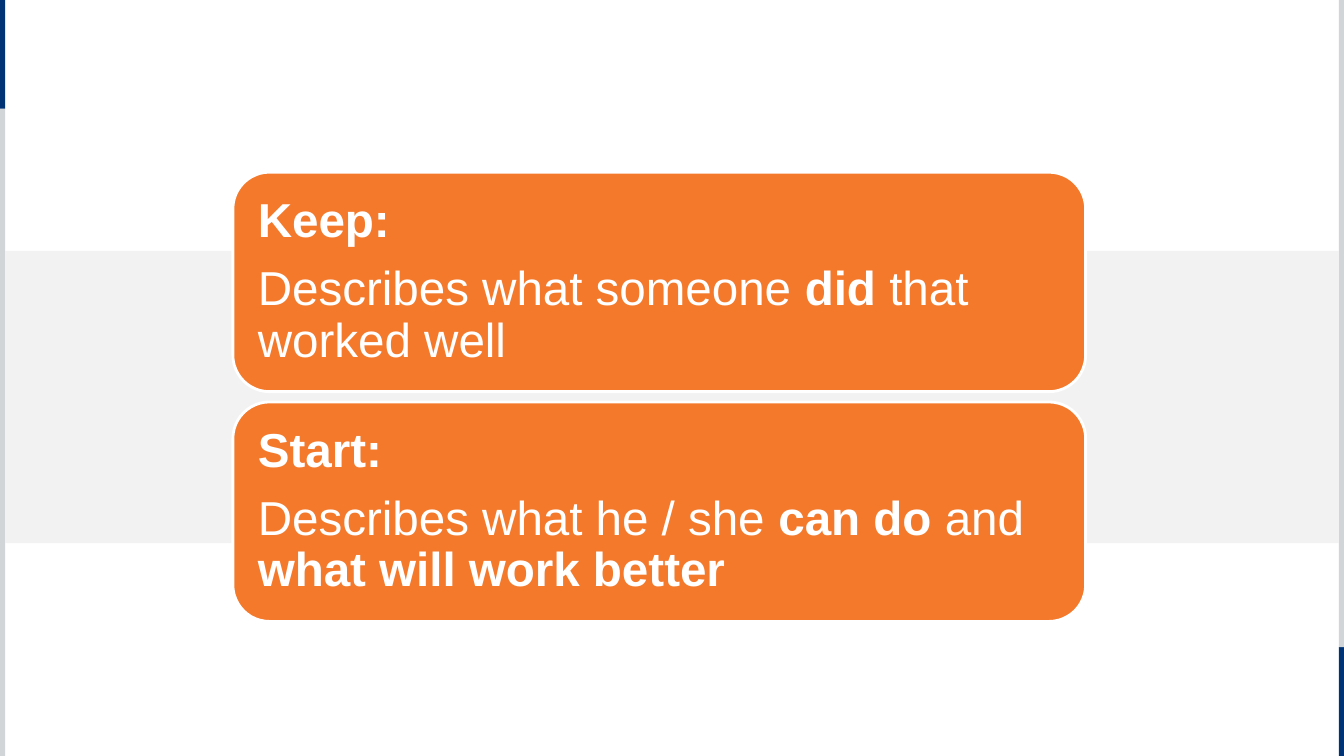
from pptx import Presentation
from pptx import util as u
from pptx.dml.color import RGBColor
from pptx.enum import shapes, text

WIDTH, HEIGHT = 33.87, 19.05
EDGE = 0.13  # width of the side strips
NAVY_HEIGHT = 2.74
NAVY, SILVER, PALE, ORANGE, WHITE = "003375", "D1D5D8", "F2F2F2", "F4792B", "FFFFFF"

CARD_LEFT, CARD_TOP = 5.87, 4.34
CARD_WIDTH, CARD_HEIGHT, CARD_STEP = 21.49, 5.53, 5.79

# Each card: paragraphs made of (wording, bold) runs
CARDS = [
    [
        [("Keep:", True)],
        [("Describes what someone ", False), ("did", True), (" that worked well", False)],
    ],
    [
        [("Start:", True)],
        [("Describes what he / she", False), (" can do ", True), ("and ", False),
         ("what will work better", True)],
    ],
]


def colour(value):
    return RGBColor.from_string(value)


def add_block(page, kind, left, top, width, height, fill):
    """Add a filled shape without outline or shadow."""
    block = page.shapes.add_shape(kind, u.Cm(left), u.Cm(top), u.Cm(width), u.Cm(height))
    block.shadow.inherit = False
    block.fill.solid()
    block.fill.fore_color.rgb = colour(fill)
    block.line.fill.background()
    return block


def add_bar(page, left, top, width, height, fill):
    return add_block(page, shapes.MSO_SHAPE.RECTANGLE, left, top, width, height, fill)


def add_card(page, top, paragraphs):
    """Add a rounded card with its text."""
    card = add_block(page, shapes.MSO_SHAPE.ROUNDED_RECTANGLE,
                     CARD_LEFT, top, CARD_WIDTH, CARD_HEIGHT, ORANGE)
    card.line.color.rgb = colour(WHITE)
    card.line.width = u.Pt(2)

    frame = card.text_frame
    frame.word_wrap = True
    frame.vertical_anchor = text.MSO_ANCHOR.MIDDLE
    frame.margin_left = frame.margin_right = u.Cm(0.36)
    frame.margin_top = frame.margin_bottom = u.Cm(0.36)
    for index, runs in enumerate(paragraphs):
        para = frame.add_paragraph() if index else frame.paragraphs[0]
        para.alignment = text.PP_ALIGN.LEFT
        para.line_spacing = 0.9
        para.space_after = u.Pt(12)
        for wording, bold in runs:
            span = para.add_run()
            span.text = wording
            span.font.name = "Arial"
            span.font.size = u.Pt(34)
            span.font.bold = bold
            span.font.color.rgb = colour(WHITE)


def main():
    deck = Presentation()
    deck.slide_width, deck.slide_height = u.Cm(WIDTH), u.Cm(HEIGHT)
    page = deck.slides.add_slide(deck.slide_layouts[6])

    # Side strips: navy at top left and bottom right
    silver_height = HEIGHT - NAVY_HEIGHT
    right = WIDTH - EDGE
    add_bar(page, right, silver_height, EDGE, NAVY_HEIGHT, NAVY)
    add_bar(page, right, 0, EDGE, silver_height, SILVER)
    add_bar(page, 0, NAVY_HEIGHT, EDGE, silver_height, SILVER)
    add_bar(page, 0, 0, EDGE, NAVY_HEIGHT, NAVY)

    # Pale band behind the cards
    add_bar(page, EDGE, 6.32, WIDTH - 2 * EDGE, 7.37, PALE)

    # Cards
    for index, paragraphs in enumerate(CARDS):
        add_card(page, CARD_TOP + index * CARD_STEP, paragraphs)

    deck.save("out.pptx")


if __name__ == "__main__":
    main()
